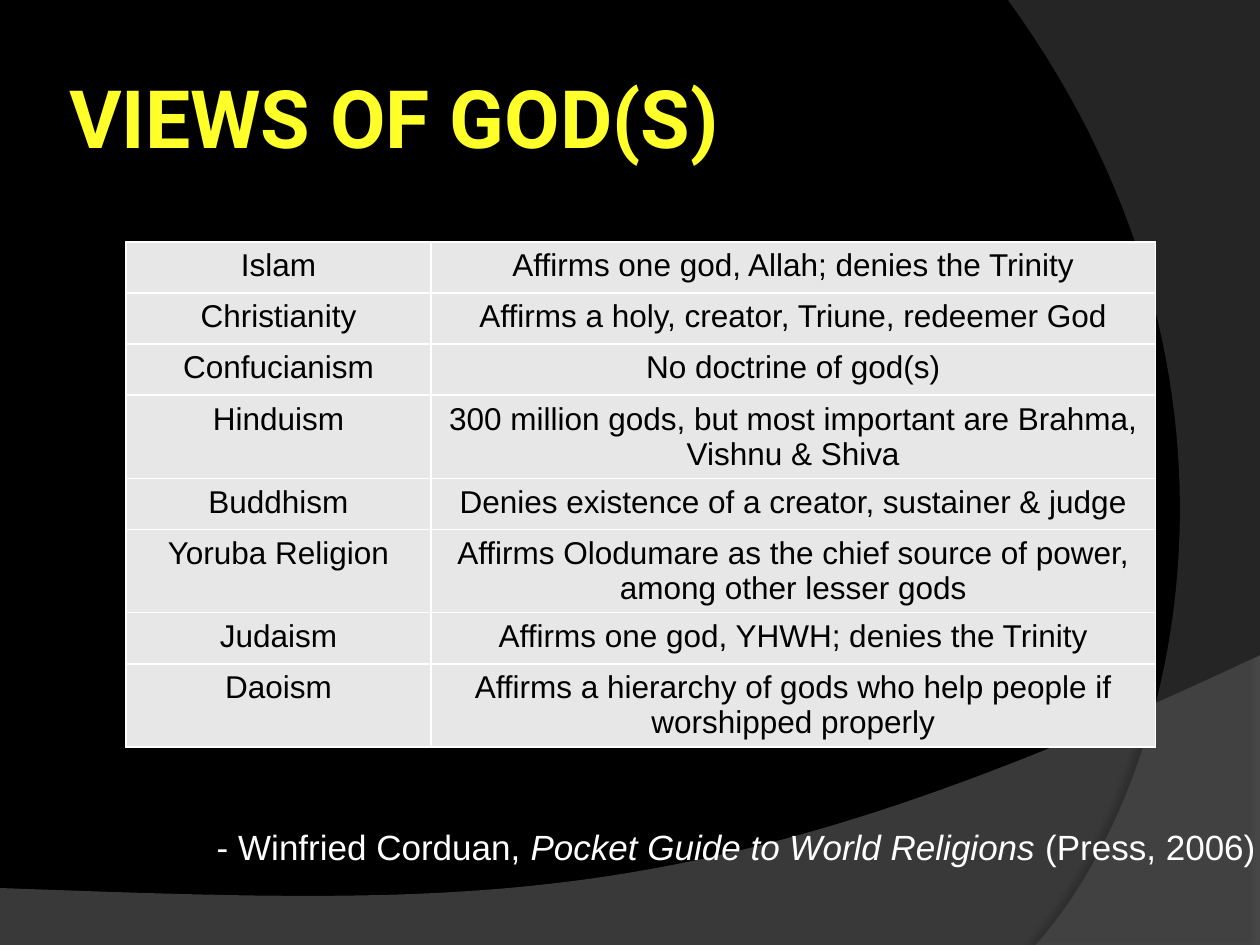
from lxml.etree import SubElement
from pptx import Presentation
from pptx.dml.color import RGBColor
from pptx.enum.text import MSO_ANCHOR, PP_ALIGN
from pptx.oxml.ns import qn
from pptx.util import Inches, Pt

BLACK = RGBColor(0x00, 0x00, 0x00)
WHITE = RGBColor(0xFF, 0xFF, 0xFF)
YELLOW = RGBColor(0xFF, 0xFF, 0x29)
CELL_GRAY = RGBColor(0xE7, 0xE7, 0xE7)
BAND_GRAY = RGBColor(0x7F, 0x7F, 0x7F)
ARC_GRAY = RGBColor(0x5E, 0x5E, 0x5E)

VIEWS = [
    ("Islam", "Affirms one god, Allah; denies the Trinity"),
    ("Christianity", "Affirms a holy, creator, Triune, redeemer God"),
    ("Confucianism", "No doctrine of god(s)"),
    ("Hinduism", "300 million gods, but most important are Brahma, Vishnu & Shiva"),
    ("Buddhism", "Denies existence of a creator, sustainer & judge"),
    ("Yoruba Religion", "Affirms Olodumare as the chief source of power, among other lesser gods"),
    ("Judaism", "Affirms one god, YHWH; denies the Trinity"),
    ("Daoism", "Affirms a hierarchy of gods who help people if worshipped properly"),
]
CITATION = [
    ("- Winfried Corduan, ", False),
    ("Pocket Guide to World Religions ", True),
    ("(Press, 2006)", False),
]


def bezier(start, pull_1, pull_2, end, steps=60):
    """Points along a cubic curve, without its start."""
    for step in range(1, steps + 1):
        t = step / steps
        weights = ((1 - t) ** 3, 3 * t * (1 - t) ** 2, 3 * t * t * (1 - t), t ** 3)
        yield tuple(
            sum(w * p[axis] for w, p in zip(weights, (start, pull_1, pull_2, end)))
            for axis in (0, 1)
        )


def add_alpha(color, percent):
    SubElement(color, qn("a:alpha"), val=str(percent * 1000))


def add_swoosh(slide, box, corners, curve, color, opacity, shadow):
    """Translucent shape: straight corners closed by a curve, in shares of the box."""
    left, top, width, height = box
    points = [
        (Inches(left + x * width), Inches(top + y * height))
        for x, y in [*corners, *bezier(corners[-1], *curve)]
    ]
    builder = slide.shapes.build_freeform(*points[0], scale=1.0)
    builder.add_line_segments(points[1:], close=True)
    swoosh = builder.convert_to_shape()
    swoosh.fill.solid()
    swoosh.fill.fore_color.rgb = color
    swoosh.line.fill.background()
    swoosh.shadow.inherit = False
    properties = swoosh.element.spPr
    add_alpha(properties.find(qn("a:solidFill")).find(qn("a:srgbClr")), opacity)

    # Soft shadow
    shade, distance, angle = shadow
    effects = properties.find(qn("a:effectLst"))
    outer = SubElement(effects, qn("a:outerShdw"), blurRad=str(Pt(4)),
                       dist=str(Pt(distance)), dir=str(angle * 60000), rotWithShape="0")
    add_alpha(SubElement(outer, qn("a:srgbClr"), val=str(BLACK)), shade)


def add_backdrop(slide, width, height):
    slide.background.fill.solid()
    slide.background.fill.fore_color.rgb = BLACK
    # Bottom band
    add_swoosh(slide, (0, 5.2, width, 2.31),
               [(0, 0.8), (0, 1), (1, 1), (1, 0)],
               [(0.56, 0.9), (0.39, 0.86), (0, 0.8)],
               BAND_GRAY, 45, (35, 3.5, 270))
    # Right arc
    add_swoosh(slide, (0.8 * width, 0, 0.2 * width, height),
               [(1, 0), (1, 1), (0.11, 1)],
               [(0.68, 0.83), (1.09, 0.4), (0, 0)],
               ARC_GRAY, 40, (45, 4, 180))


def add_title(slide, box, text):
    frame = slide.shapes.add_textbox(*map(Inches, box)).text_frame
    frame.word_wrap = True
    frame.vertical_anchor = MSO_ANCHOR.MIDDLE
    frame.margin_left = frame.margin_right = Inches(0.05)
    heading = frame.paragraphs[0]
    heading.text = text
    heading.font.name = "Roboto"
    heading.font.size = Pt(46)
    heading.font.bold = True
    heading.font.color.rgb = YELLOW


def add_inner_borders(cell, row, column):
    """White rules between cells; the outer edge of the table stays bare."""
    sides = {"lnL": column > 0, "lnR": column < 1,
             "lnT": row > 0, "lnB": row < len(VIEWS) - 1}
    properties = cell._tc.get_or_add_tcPr()
    for position, side in enumerate(side for side, inner in sides.items() if inner):
        edge = SubElement(properties, qn(f"a:{side}"), w=str(Pt(1)))
        fill = SubElement(edge, qn("a:solidFill"))
        SubElement(fill, qn("a:srgbClr"), val=str(WHITE))
        properties.insert(position, edge)


def add_views_table(slide, box, name_width, row_height):
    left, top, width = box
    table = slide.shapes.add_table(
        len(VIEWS), 2, Inches(left), Inches(top),
        Inches(width), row_height * len(VIEWS)).table
    table.first_row = table.horz_banding = False
    table.columns[0].width = Inches(name_width)
    table.columns[1].width = Inches(width - name_width)
    for row, texts in enumerate(VIEWS):
        for column, text in enumerate(texts):
            cell = table.cell(row, column)
            cell.fill.solid()
            cell.fill.fore_color.rgb = CELL_GRAY
            add_inner_borders(cell, row, column)
            entry = cell.text_frame.paragraphs[0]
            entry.text = text
            entry.alignment = PP_ALIGN.CENTER
            entry.font.name = "Arial"
            entry.font.size = Pt(18)
            entry.font.color.rgb = BLACK


def add_citation(slide, box):
    frame = slide.shapes.add_textbox(*map(Inches, box)).text_frame
    frame.word_wrap = True
    frame.margin_left = Inches(0.14)
    frame.margin_right = 0
    citation = frame.paragraphs[0]
    citation.space_before = Pt(4)
    citation.font.name = "Arial"
    citation.font.size = Pt(20)
    citation.font.color.rgb = WHITE
    for text, italic in CITATION:
        run = citation.add_run()
        run.text = text
        run.font.italic = italic


def main():
    width, height = 10, 7.5
    prs = Presentation()
    prs.slide_width, prs.slide_height = Inches(width), Inches(height)
    slide = prs.slides.add_slide(prs.slide_layouts[6])
    add_backdrop(slide, width, height)
    add_views_table(slide, (1, 1.92, 8.17), name_width=2.42, row_height=Pt(29.2))
    add_title(slide, (0.5, 0.3, 8.17, 1.25), "VIEWS OF GOD(S)")
    add_citation(slide, (1.58, 6.5, 8.42, 0.58))
    prs.save("out.pptx")


if __name__ == "__main__":
    main()
